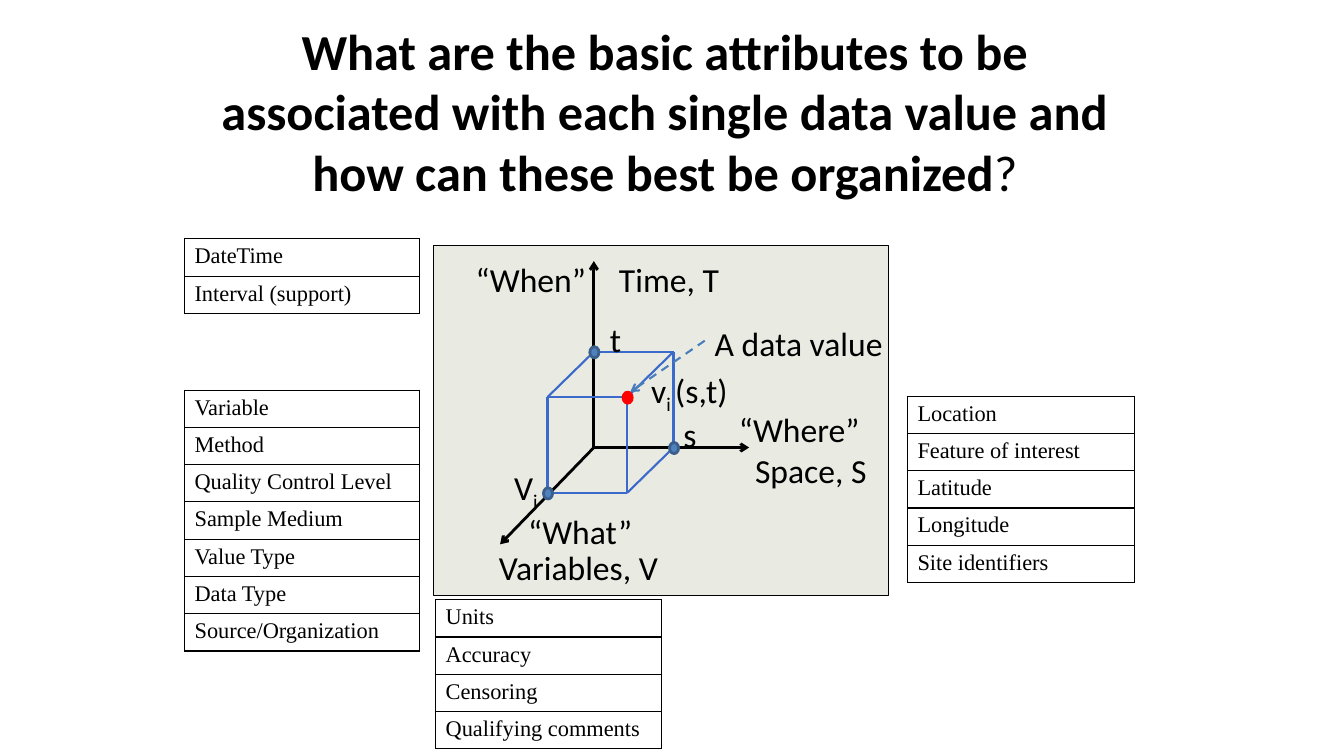
from dataclasses import dataclass

from lxml import etree
from pptx import Presentation
from pptx.dml.color import RGBColor
from pptx.enum.dml import MSO_LINE_DASH_STYLE as Dash
from pptx.enum.shapes import MSO_CONNECTOR as Conn, MSO_SHAPE as Shape
from pptx.enum.text import MSO_ANCHOR as Anchor, MSO_AUTO_SIZE as AutoSize, PP_ALIGN as Align
from pptx.oxml.ns import qn
from pptx.util import Emu, Pt

EMU_PER_PX = 9144  # 100 px to the inch
ROW_H = 37
DOT_W, DOT_H = 9, 11
COLORS = {
    "black": "000000",
    "panel": "E9EAE2",
    "cube": "3C6ACA",
    "dot": "4F81BD",
    "dot_edge": "3A5F8C",
    "pointer": "4A7EBB",
    "value": "FF0000",
}


@dataclass
class Label:
    x: int
    y: int
    w: int
    texts: tuple[str, ...]  # every second text is a subscript


@dataclass
class AttributeTable:
    x: int
    y: int
    w: int
    names: tuple[str, ...]


LABELS = [
    Label(739, 441, 132, ("Space, S",)),
    Label(604, 252, 121, ("Time, T",)),
    Label(485, 538, 180, ("Variables, V",)),
    Label(668, 406, 33, ("s",)),
    Label(595, 311, 31, ("t",)),
    Label(500, 458, 44, ("V", "i")),
    Label(636, 362, 98, ("v", "i ", "(s,t)")),
    Label(723, 401, 141, ("“Where”",)),
    Label(514, 502, 124, ("“What”",)),
    Label(462, 252, 131, ("“When”",)),
    Label(699, 315, 188, ("A data value",)),
]
TABLES = [
    AttributeTable(183, 387, 233, (
        "Variable", "Method", "Quality Control Level", "Sample Medium",
        "Value Type", "Data Type", "Source/Organization")),
    AttributeTable(432, 595, 224, (
        "Units", "Accuracy", "Censoring", "Qualifying comments")),
    AttributeTable(900, 393, 225, (
        "Location", "Feature of interest", "Latitude", "Longitude",
        "Site identifiers")),
    AttributeTable(183, 237, 233, ("DateTime", "Interval (support)")),
]


def px(*lengths: int) -> list[Emu]:
    return [Emu(n * EMU_PER_PX) for n in lengths]


def rgb(name: str) -> RGBColor:
    return RGBColor.from_string(COLORS[name])


def add_run(p, text: str, *, size: int = 24, font: str = "Calibri",
            bold: bool = False, subscript: bool = False) -> None:
    r = p.add_run()
    r.text = text
    r.font.size, r.font.name, r.font.bold = Pt(size), font, bold
    r.font.color.rgb = rgb("black")
    if subscript:
        r.font._element.set("baseline", "-25000")


def add_line(shapes, start: tuple[int, int], end: tuple[int, int], color: str,
             width: float, *, arrow: bool = False, dashed: bool = False) -> None:
    line = shapes.add_connector(Conn.STRAIGHT, *px(*start, *end))
    line.line.color.rgb = rgb(color)
    line.line.width = Pt(width)
    if dashed:
        line.line.dash_style = Dash.DASH
    if arrow:
        etree.SubElement(line.line._get_or_add_ln(), qn("a:tailEnd"), type="arrow")
    etree.SubElement(line._element.spPr, qn("a:effectLst"))


def add_solid(shapes, kind: Shape, box: tuple[int, int, int, int],
              fill: str, edge: str, width: float) -> None:
    sp = shapes.add_shape(kind, *px(*box))
    sp.shadow.inherit = False
    sp.fill.solid()
    sp.fill.fore_color.rgb = rgb(fill)
    sp.line.color.rgb = rgb(edge)
    sp.line.width = Pt(width)


def add_dot(shapes, center: tuple[int, int], fill: str, edge: str) -> None:
    x, y = center
    box = (x - DOT_W // 2, y - DOT_H // 2, DOT_W, DOT_H)
    add_solid(shapes, Shape.OVAL, box, fill, edge, 2)


def add_label(shapes, label: Label) -> None:
    tf = shapes.add_textbox(*px(label.x, label.y, label.w, 50)).text_frame
    tf.word_wrap = False
    tf.auto_size = AutoSize.SHAPE_TO_FIT_TEXT
    for i, text in enumerate(label.texts):
        add_run(tf.paragraphs[0], text, subscript=i % 2 == 1)


def add_borders(cell) -> None:
    tcPr = cell._tc.get_or_add_tcPr()
    for side in ("lnL", "lnR", "lnT", "lnB"):
        ln = etree.SubElement(tcPr, qn(f"a:{side}"), w=str(Pt(1)))
        fill = etree.SubElement(ln, qn("a:solidFill"))
        etree.SubElement(fill, qn("a:srgbClr"), val=COLORS["black"])


def add_attributes(shapes, group: AttributeTable) -> None:
    n = len(group.names)
    table = shapes.add_table(n, 1, *px(group.x, group.y, group.w, n * ROW_H)).table
    table.first_row = table.horz_banding = False
    for i, name in enumerate(group.names):
        cell = table.cell(i, 0)
        add_borders(cell)
        cell.fill.background()
        add_run(cell.text_frame.paragraphs[0], name, size=16, font="Times New Roman")


def add_diagram(shapes) -> None:
    add_solid(shapes, Shape.RECTANGLE, (430, 244, 451, 347), "panel", "black", 0.75)

    # Axes
    origin = (589, 444)
    for tip in ((589, 259), (496, 540), (743, 444)):
        add_line(shapes, origin, tip, "black", 2, arrow=True)

    # Cube: front face, then the back edges that leave the axes free
    left, right, top, bottom = 543, 622, 394, 489
    dx, dy = 46, -45
    front = [(left, bottom), (left, top), (right, top), (right, bottom)]
    back = [(x + dx, y + dy) for x, y in front]
    edges = list(zip(front, front[1:] + front[:1]))
    edges += list(zip(front[1:], back[1:])) + list(zip(back[1:], back[2:]))
    for start, end in edges:
        add_line(shapes, start, end, "cube", 1.5)

    # Points on the axes and the data value
    for center in (back[3], back[1], front[0]):
        add_dot(shapes, center, "dot", "dot_edge")
    add_dot(shapes, front[2], "value", "value")

    for label in LABELS:
        add_label(shapes, label)
    add_line(shapes, (699, 338), (625, 389), "pointer", 1.5, arrow=True, dashed=True)


def main() -> None:
    prs = Presentation()
    prs.slide_width, prs.slide_height = px(1333, 750)
    s = prs.slides.add_slide(prs.slide_layouts[5])

    # Title
    title = s.shapes.title
    title.left, title.top, title.width, title.height = px(200, 28, 919, 163)
    tf = title.text_frame
    tf.word_wrap = True
    tf.auto_size = AutoSize.NONE
    tf.vertical_anchor = Anchor.MIDDLE
    p = tf.paragraphs[0]
    p.alignment = Align.CENTER
    add_run(p, "What are the basic attributes to be associated with each single "
               "data value and how can these best be organized", size=36, bold=True)
    add_run(p, "?", size=36)

    # Data cube and attribute tables
    add_diagram(s.shapes.add_group_shape().shapes)
    for group in TABLES:
        add_attributes(s.shapes, group)

    prs.save("out.pptx")


if __name__ == "__main__":
    main()
